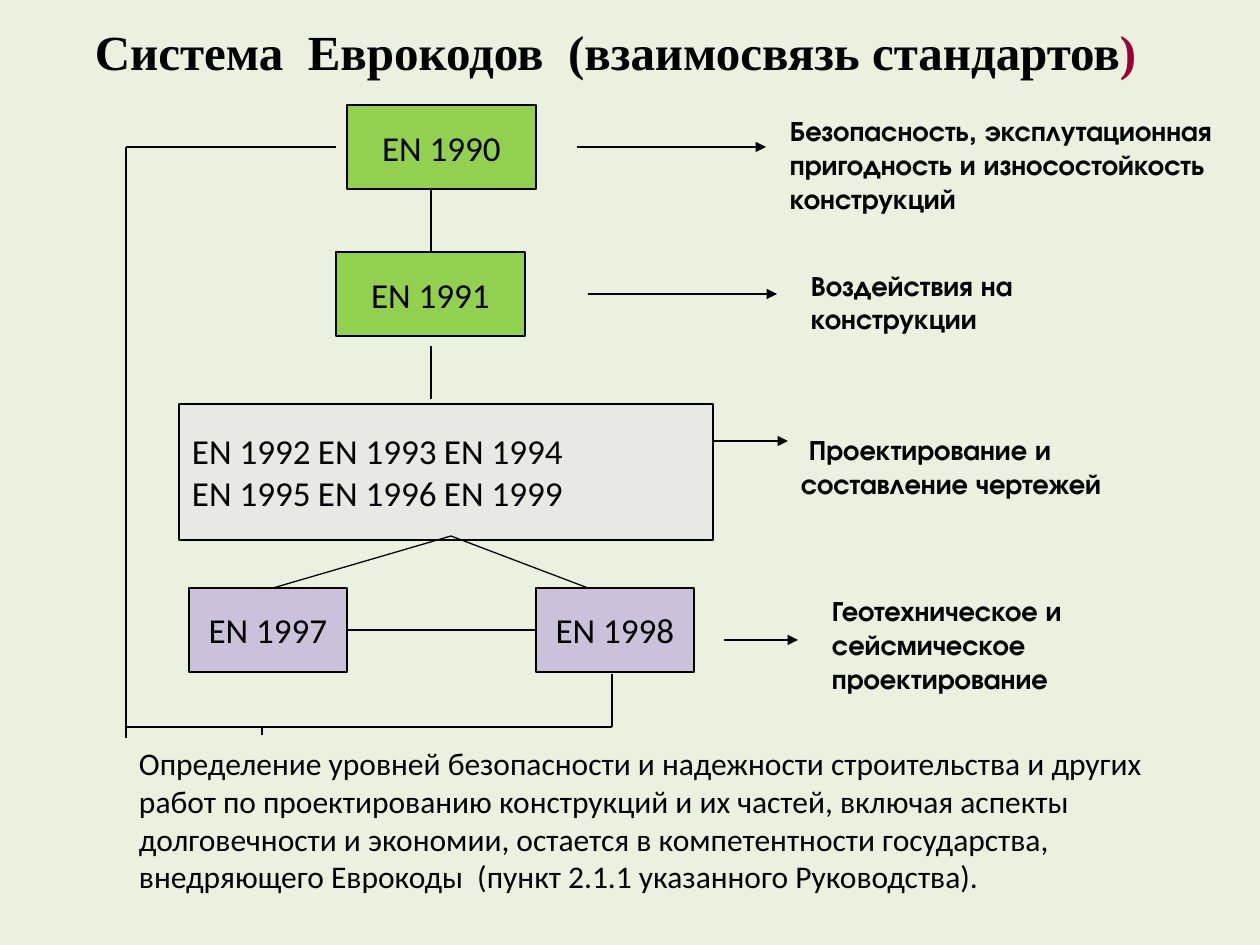
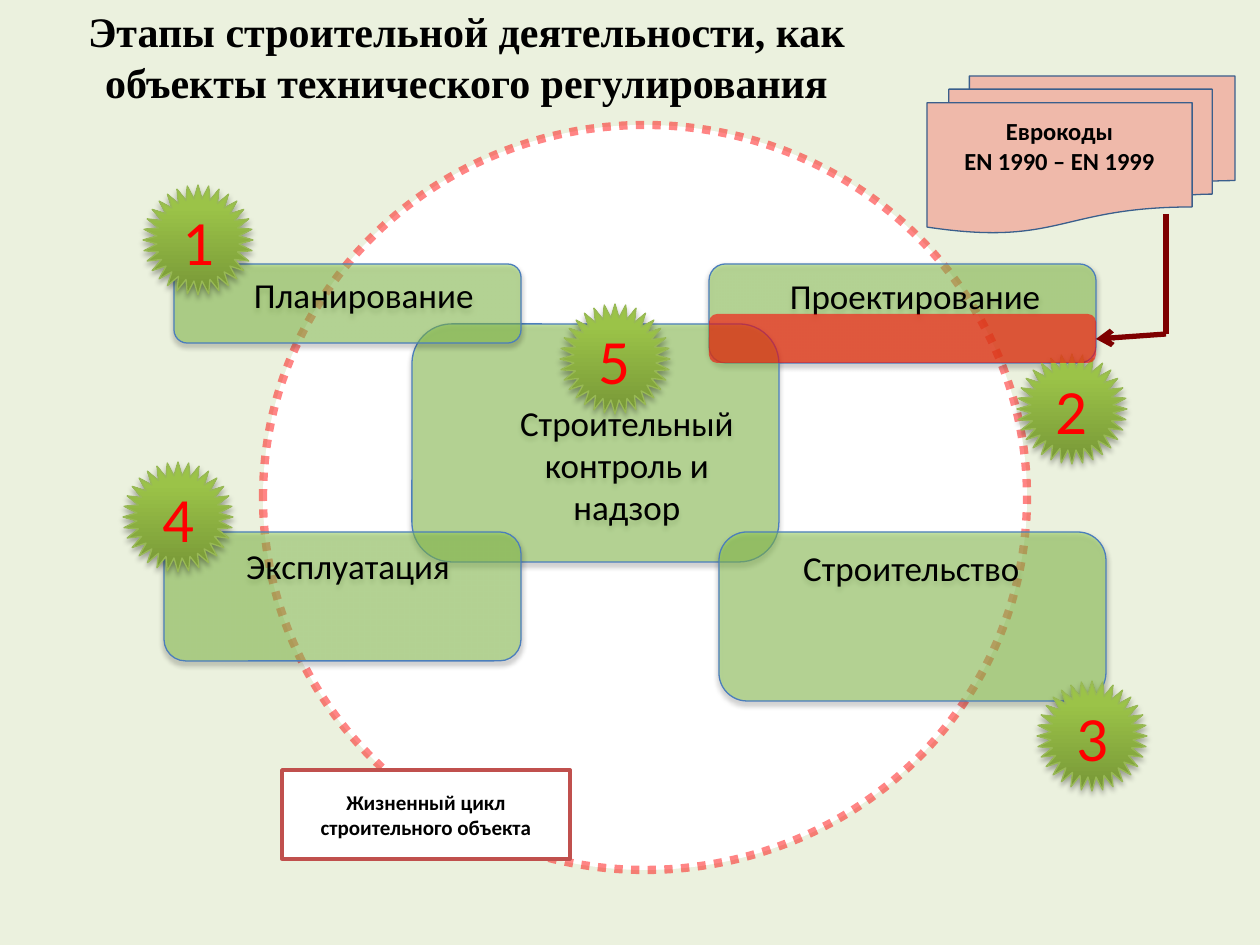
from dataclasses import dataclass

import lxml.etree
import pptx
import pptx.dml.color
import pptx.enum.dml
import pptx.enum.shapes
import pptx.enum.text
import pptx.oxml.ns
import pptx.util

EMU_PER_PX = 914400 / 126
INSET_X, INSET_Y = 13, 6
COLORS = {
    "background": "EBF1DE", "black": "000000", "white": "FFFFFF", "red": "FF0000",
    "crimson": "990033", "green": "92D050", "lilac": "CCC1DA", "pale_lilac": "E6E0EC",
    "stage_line": "4B7EBC", "badge_dark": "779737", "badge_light": "9BC348",
    "badge_line": "98B955", "cycle_line": "C0504D", "document_line": "3A5F8C",
    "arrow": "7E0000",
}
SHAPE = pptx.enum.shapes.MSO_SHAPE
ALIGN = pptx.enum.text.PP_ALIGN
ANCHOR = pptx.enum.text.MSO_ANCHOR


@dataclass(frozen=True)
class Area:
    x: int
    y: int
    w: int
    h: int


@dataclass(frozen=True)
class Style:
    size: int
    font: str = "Calibri"
    bold: bool = False
    color: str = "black"
    align: ALIGN = ALIGN.CENTER
    anchor: ANCHOR = ANCHOR.MIDDLE
    indent: int = 0
    first_indent: int = 0
    top: int = INSET_Y
    bottom: int = INSET_Y


@dataclass(frozen=True)
class Look:
    fill: str
    alpha: int = 100
    line: str | None = None
    width: float = 0.75
    line_alpha: int = 100
    shadow: bool = False


@dataclass(frozen=True)
class Block:
    text: str
    area: Area
    look: Look
    style: Style


@dataclass(frozen=True)
class Label:
    text: str
    area: Area
    first_indent: int = 0


@dataclass(frozen=True)
class Link:
    x1: int
    y1: int
    x2: int
    y2: int
    head: str | None = None


@dataclass(frozen=True)
class Badge:
    number: int
    x: int
    y: int


def px(value: int) -> pptx.util.Emu:
    return pptx.util.Emu(round(value * EMU_PER_PX))


def rgb(name: str) -> pptx.dml.color.RGBColor:
    return pptx.dml.color.RGBColor.from_string(COLORS[name])


def add_xml(parent, tag: str, **attributes: str):
    child = lxml.etree.SubElement(parent, pptx.oxml.ns.qn(tag))
    for key, value in attributes.items():
        child.set(key, value)
    return child


def set_alpha(s, query: str, percent: int) -> None:
    if percent < 100:
        for color in s._element.spPr.xpath(query):
            add_xml(color, "a:alpha", val=str(percent * 1000))


def format_run(r, style: Style) -> None:
    r.font.name = style.font
    r.font.size = pptx.util.Pt(style.size)
    r.font.bold = style.bold
    r.font.color.rgb = rgb(style.color)


def write(s, text: str, style: Style):
    tf = s.text_frame
    tf.text = text
    tf.word_wrap = True
    tf.vertical_anchor = style.anchor
    tf.margin_left = tf.margin_right = px(INSET_X)
    tf.margin_top, tf.margin_bottom = px(style.top), px(style.bottom)
    for p in tf.paragraphs:
        p.alignment = style.align
        pPr = p._p.get_or_add_pPr()
        pPr.set("marL", str(px(style.indent)))
        pPr.set("indent", str(px(style.first_indent)))
        for r in p.runs:
            format_run(r, style)
    return tf


def add_text(slide, text: str, area: Area, style: Style):
    s = slide.shapes.add_textbox(px(area.x), px(area.y), px(area.w), px(area.h))
    return write(s, text, style)


def add_figure(slide, kind: SHAPE, area: Area, look: Look):
    s = slide.shapes.add_shape(kind, px(area.x), px(area.y), px(area.w), px(area.h))
    s.shadow.inherit = False
    s.fill.solid()
    s.fill.fore_color.rgb = rgb(look.fill)
    set_alpha(s, "./a:solidFill/a:srgbClr", look.alpha)
    if look.line:
        s.line.color.rgb = rgb(look.line)
        s.line.width = pptx.util.Pt(look.width)
        set_alpha(s, "./a:ln/a:solidFill/a:srgbClr", look.line_alpha)
    else:
        s.line.fill.background()
    if look.shadow:
        effects = s._element.spPr.find(pptx.oxml.ns.qn("a:effectLst"))
        shadow = add_xml(effects, "a:outerShdw", blurRad="39370", dist="22860",
                         dir="5400000", rotWithShape="0")
        color = add_xml(shadow, "a:srgbClr", val=COLORS["black"])
        add_xml(color, "a:alpha", val="35000")
    return s


def add_block(slide, kind: SHAPE, block: Block):
    s = add_figure(slide, kind, block.area, block.look)
    return write(s, block.text, block.style)


def add_link(slide, link: Link, color: str = "black", width: float = 0.75) -> None:
    s = slide.shapes.add_connector(
        pptx.enum.shapes.MSO_CONNECTOR.STRAIGHT,
        px(link.x1), px(link.y1), px(link.x2), px(link.y2))
    s.line.color.rgb = rgb(color)
    s.line.width = pptx.util.Pt(width)
    add_xml(s._element.spPr, "a:effectLst")
    if link.head:
        add_xml(s.line._get_or_add_ln(), "a:tailEnd", type=link.head)


def add_badge(slide, badge: Badge) -> None:
    s = add_figure(slide, SHAPE.STAR_32_POINT, Area(badge.x, badge.y, 110, 110),
                   Look("badge_light", line="badge_line", shadow=True))
    s.fill.gradient()
    s.fill.gradient_angle = 90
    stops = zip(s.fill.gradient_stops, (("badge_dark", 0), ("badge_light", 0.8)))
    for stop, (color, position) in stops:
        stop.color.rgb = rgb(color)
        stop.position = position
    write(s, str(badge.number), Style(36, color="red"))


def title_style(size: int) -> Style:
    return Style(size, "Times New Roman", True, anchor=ANCHOR.TOP)


def new_slide(prs):
    slide = prs.slides.add_slide(prs.slide_layouts[6])
    slide.background.fill.solid()
    slide.background.fill.fore_color.rgb = rgb("background")
    return slide


CODE = Style(20)
CODE_GRID = Style(20, align=ALIGN.LEFT)
BASIC = Look("green", line="black")
SPECIAL = Look("lilac", line="black")
CODE_BLOCKS = [
    Block("EN 1990", Area(347, 105, 189, 84), BASIC, CODE),
    Block("EN 1991", Area(336, 252, 189, 84), BASIC, CODE),
    Block("EN 1997", Area(189, 588, 158, 84), SPECIAL, CODE),
    Block("EN 1998", Area(536, 588, 158, 84), SPECIAL, CODE),
]
DESIGN_CODES = Block("EN 1992\tEN 1993\tEN 1994\nEN 1995\tEN 1996\tEN 1999",
                     Area(179, 404, 534, 136), Look("pale_lilac", 50, "black"), CODE_GRID)
DESIGN_TABS = (158, 308)
LABELS = [
    Label("Безопасность, эксплутационная пригодность и износостойкость конструкций",
          Area(777, 108, 483, 171)),
    Label("Воздействия на конструкции", Area(798, 262, 325, 81)),
    Label("Проектирование и составление чертежей", Area(788, 427, 378, 89), 8),
    Label("Геотехническое и сейсмическое проектирование", Area(819, 588, 305, 115)),
]
CODE_LINKS = [
    Link(431, 189, 431, 252), Link(431, 346, 431, 399),
    Link(336, 147, 126, 147), Link(126, 147, 126, 738),
    Link(131, 727, 247, 727), Link(126, 727, 612, 727),
    Link(612, 674, 612, 727), Link(262, 727, 262, 735),
    Link(451, 536, 588, 588), Link(451, 536, 273, 588),
    Link(347, 630, 536, 630),
    Link(577, 147, 766, 147, "triangle"), Link(588, 294, 777, 294, "triangle"),
    Link(714, 441, 788, 441, "triangle"), Link(724, 640, 798, 640, "triangle"),
]
STAGE = Style(20, align=ALIGN.JUSTIFY, anchor=ANCHOR.TOP, indent=63)
CONTROL = Style(20, anchor=ANCHOR.TOP, indent=63, top=66)
STAGE_LOOK = Look("green", 49, "stage_line", shadow=True)
STAGES = [
    Block("Проектирование", Area(709, 264, 387, 99), STAGE_LOOK, STAGE),
    Block("Строительный контроль и надзор", Area(412, 324, 367, 238), STAGE_LOOK, CONTROL),
    Block("Эксплуатация", Area(164, 532, 357, 129), STAGE_LOOK, STAGE),
    Block("Строительство", Area(719, 532, 387, 169), STAGE_LOOK, STAGE),
    Block("Планирование", Area(174, 264, 347, 79), STAGE_LOOK, STAGE),
]
BADGES = [Badge(1, 143, 185), Badge(2, 1017, 354), Badge(5, 560, 304),
          Badge(4, 123, 462), Badge(3, 1037, 681)]


def build_codes(prs) -> None:
    slide = new_slide(prs)
    style = title_style(28)
    tf = add_text(slide, "Система  Еврокодов  (взаимосвязь стандартов",
                  Area(49, 16, 1133, 63), style)
    r = tf.paragraphs[0].add_run()
    r.text = ")"
    format_run(r, style)
    r.font.color.rgb = rgb("crimson")
    for block in CODE_BLOCKS:
        add_block(slide, SHAPE.RECTANGLE, block)
    tf = add_block(slide, SHAPE.RECTANGLE, DESIGN_CODES)
    for p in tf.paragraphs:
        tabs = add_xml(p._p.get_or_add_pPr(), "a:tabLst")
        for offset in DESIGN_TABS:
            add_xml(tabs, "a:tab", pos=str(px(offset)), algn="l")
    for label in LABELS:
        add_text(slide, label.text, label.area,
                 Style(16, "TeX Gyre Adventor", True, align=ALIGN.LEFT,
                       anchor=ANCHOR.TOP, first_indent=label.first_indent))
    for link in CODE_LINKS:
        add_link(slide, link)
    add_text(slide, "Определение уровней безопасности и надежности строительства и других "
             "работ по проектированию конструкций и их частей, включая аспекты "
             "долговечности и экономии, остается в компетентности государства, "
             "внедряющего Еврокоды  (пункт 2.1.1 указанного Руководства).",
             Area(126, 738, 1055, 165), Style(18, align=ALIGN.LEFT, anchor=ANCHOR.TOP))


def build_stages(prs) -> None:
    slide = new_slide(prs)
    cycle = add_figure(slide, SHAPE.OVAL, Area(263, 125, 764, 745),
                       Look("white", line="red", width=4.75, line_alpha=48))
    cycle.line.dash_style = pptx.enum.dml.MSO_LINE.ROUND_DOT
    add_text(slide, "Этапы строительной деятельности, как объекты технического регулирования",
             Area(25, 0, 883, 115), title_style(24))
    for stage in STAGES:
        add_block(slide, SHAPE.ROUNDED_RECTANGLE, stage)
    add_block(slide, SHAPE.RECTANGLE, Block(
        "Жизненный цикл строительного объекта", Area(282, 770, 288, 89),
        Look("white", line="cycle_line", width=2), Style(12, bold=True)))
    for badge in BADGES:
        add_badge(slide, badge)
    add_figure(slide, SHAPE.ROUNDED_RECTANGLE, Area(709, 314, 387, 49), Look("red", 58))
    add_block(slide, SHAPE.FLOWCHART_MULTIDOCUMENT, Block(
        "Еврокоды\nEN 1990 – EN 1999", Area(927, 76, 308, 157),
        Look("red", 23, "document_line", 0), Style(14, bold=True, bottom=44)))
    for link in (Link(1166, 334, 1096, 339, "arrow"), Link(1166, 214, 1166, 334)):
        add_link(slide, link, "arrow", 3)


def main() -> None:
    prs = pptx.Presentation()
    prs.slide_width, prs.slide_height = px(1260), px(945)
    build_codes(prs)
    build_stages(prs)
    prs.save("out.pptx")


if __name__ == "__main__":
    main()
